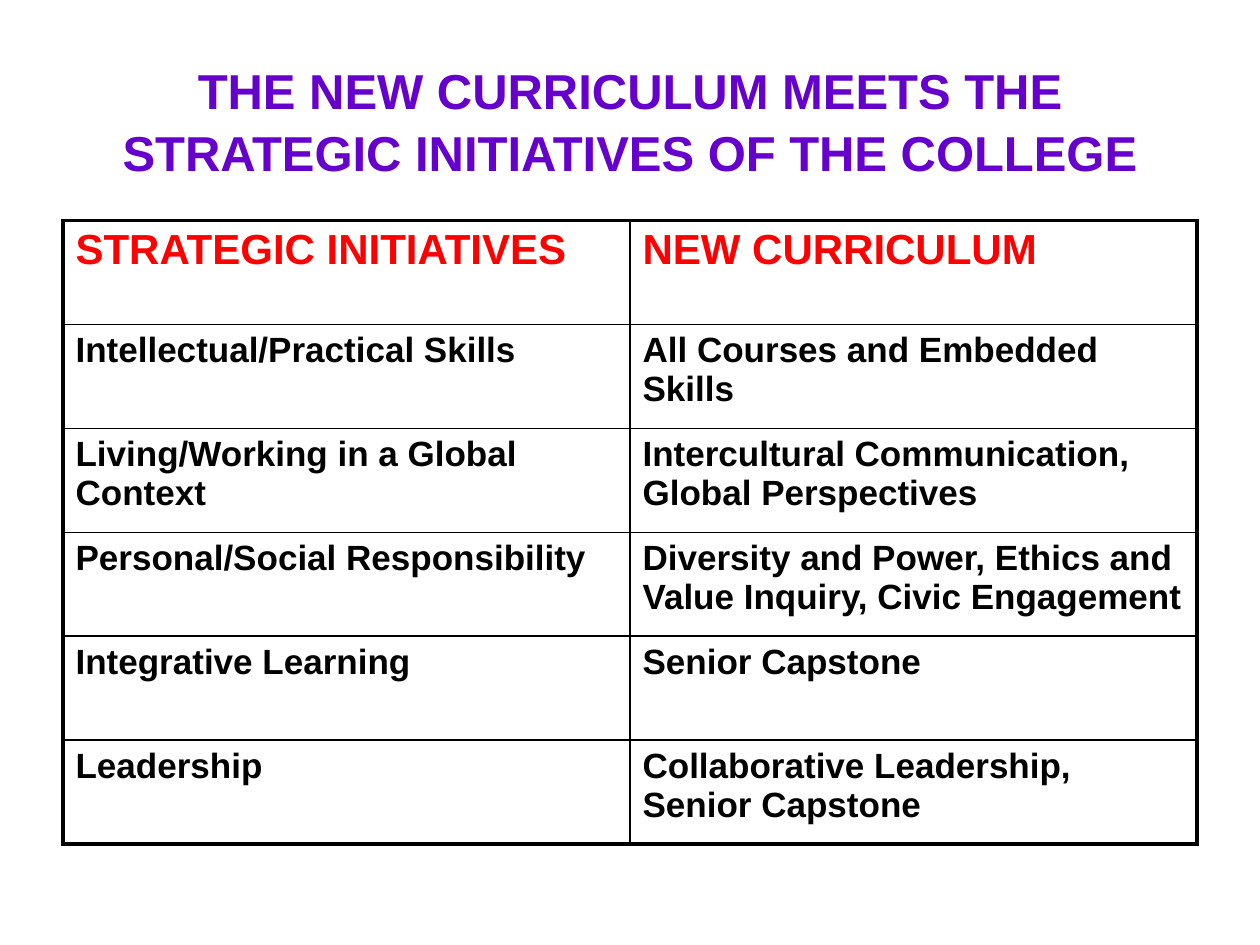
from lxml import etree
from pptx import Presentation
from pptx import util as u
from pptx.dml.color import RGBColor
from pptx.enum import text
from pptx.oxml.ns import qn

TITLE = "THE NEW CURRICULUM MEETS THE STRATEGIC INITIATIVES OF THE COLLEGE"
ROWS = [
    ("STRATEGIC INITIATIVES", "NEW CURRICULUM"),
    ("Intellectual/Practical Skills", "All Courses and Embedded Skills"),
    ("Living/Working in a Global Context",
     "Intercultural Communication, Global Perspectives"),
    ("Personal/Social Responsibility",
     "Diversity and Power, Ethics and Value Inquiry, Civic Engagement"),
    ("Integrative Learning", "Senior Capstone"),
    ("Leadership", "Collaborative Leadership, Senior Capstone"),
]

PURPLE = RGBColor(0x66, 0x00, 0xCC)
RED = RGBColor(0xFF, 0x00, 0x00)
BLACK = RGBColor(0x00, 0x00, 0x00)
FONT = "Arial"
THIN, THICK = 1, 2.25

WIDTH, HEIGHT = u.Inches(10), u.Inches(7.5)
MARGIN = int(WIDTH * 0.05)
CONTENT_W = WIDTH - 2 * MARGIN
TITLE_TOP, TITLE_H = u.Inches(0.32), u.Inches(1.25)
TABLE_TOP, TABLE_H = u.Inches(1.75), u.Inches(4.95)


def add_run(p, words, size, color):
    r = p.add_run()
    r.text = words
    r.font.name, r.font.size, r.font.bold = FONT, u.Pt(size), True
    r.font.color.rgb = color


def set_border(cell, side, points):
    ln = etree.SubElement(cell._tc.get_or_add_tcPr(), qn(f"a:ln{side}"),
                          w=str(u.Pt(points)))
    fill = etree.SubElement(ln, qn("a:solidFill"))
    etree.SubElement(fill, qn("a:srgbClr"), val=str(BLACK))


def add_title(slide):
    sp = slide.shapes.add_textbox(MARGIN, TITLE_TOP, CONTENT_W, TITLE_H)
    tf = sp.text_frame
    tf.word_wrap = True
    tf.vertical_anchor = text.MSO_ANCHOR.MIDDLE
    p = tf.paragraphs[0]
    p.alignment = text.PP_ALIGN.CENTER
    p.line_spacing = 1.05
    add_run(p, TITLE, 28, PURPLE)


def add_initiatives_table(slide):
    n_rows, n_cols = len(ROWS), len(ROWS[0])
    table = slide.shapes.add_table(n_rows, n_cols, MARGIN, TABLE_TOP,
                                   CONTENT_W, TABLE_H).table
    table.first_row = table.horz_banding = False
    for i, row in enumerate(ROWS):
        size, color = (24, RED) if i == 0 else (20, BLACK)
        for j, words in enumerate(row):
            cell = table.cell(i, j)
            add_run(cell.text_frame.paragraphs[0], words, size, color)
            outer = {"L": j == 0, "R": j == n_cols - 1,
                     "T": i == 0, "B": i == n_rows - 1}
            for side, is_outer in outer.items():
                set_border(cell, side, THICK if is_outer else THIN)
            cell.fill.background()


def main():
    prs = Presentation()
    prs.slide_width, prs.slide_height = WIDTH, HEIGHT
    slide = prs.slides.add_slide(prs.slide_layouts[6])
    add_title(slide)
    add_initiatives_table(slide)
    prs.save("out.pptx")


if __name__ == "__main__":
    main()
